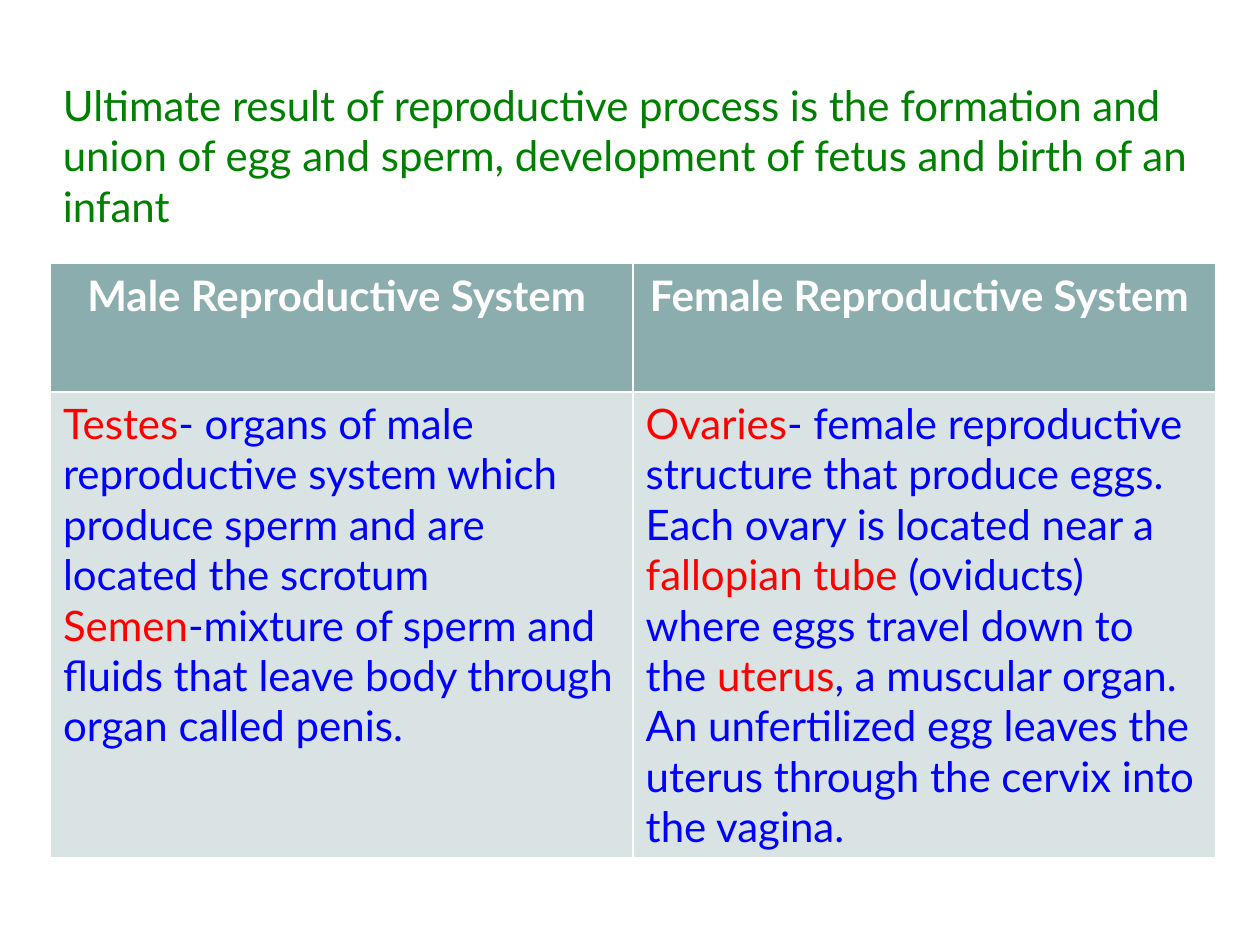
from pptx import Presentation
from pptx.dml.color import RGBColor
from pptx.enum.text import PP_ALIGN
from pptx.util import Inches, Pt

GREEN = RGBColor(0x00, 0x80, 0x00)
WHITE = RGBColor(0xFF, 0xFF, 0xFF)
RED = RGBColor(0xFF, 0x00, 0x00)
BLUE = RGBColor(0x00, 0x00, 0xFF)
HEADER_FILL = RGBColor(0x8C, 0xAD, 0xAE)
BODY_FILL = RGBColor(0xDA, 0xE3, 0xE3)

LEFT, WIDTH = Inches(0.4), Inches(9.25)


def add_text(paragraph, text, color, bold=False):
    run = paragraph.add_run()
    run.text = text
    run.font.name = "Lato"
    run.font.size = Pt(24)
    run.font.bold = bold
    run.font.color.rgb = color


presentation = Presentation()
presentation.slide_width = Inches(10)
presentation.slide_height = Inches(7.5)
slide = presentation.slides.add_slide(presentation.slide_layouts[6])

# Introduction
introduction = slide.shapes.add_textbox(LEFT, Inches(0.58), WIDTH, Inches(1.4))
introduction.text_frame.word_wrap = True
add_text(
    introduction.text_frame.paragraphs[0],
    "Ultimate result of reproductive process is the formation and union of "
    "egg and sperm, development of fetus and birth of an infant",
    GREEN,
)

# Each column: a heading, then paragraphs of (text, color) pieces
columns = [
    ("Male Reproductive System ", [
        [("Testes", RED),
         ("- organs of male reproductive system which produce sperm and are "
          "located the scrotum", BLUE)],
        [("Semen", RED),
         ("-mixture of sperm and fluids that leave body through organ called "
          "penis.", BLUE)],
    ]),
    ("Female Reproductive System ", [
        [("Ovaries", RED),
         ("- female reproductive structure that produce eggs. Each ovary is "
          "located near a ", BLUE),
         ("fallopian tube ", RED),
         ("(oviducts) where eggs travel down to the ", BLUE),
         ("uterus", RED),
         (", a muscular organ. An unfertilized egg leaves the uterus through "
          "the cervix into the vagina.", BLUE)],
    ]),
]

# Comparison table; its default style supplies the white borders
table = slide.shapes.add_table(
    2, len(columns), LEFT, Inches(2.09), WIDTH, Inches(4.7)
).table
table.rows[0].height = Inches(1.02)
table.rows[1].height = Inches(3.68)

for column, (heading, paragraphs) in enumerate(columns):
    header_cell = table.cell(0, column)
    header_cell.fill.solid()
    header_cell.fill.fore_color.rgb = HEADER_FILL
    header_paragraph = header_cell.text_frame.paragraphs[0]
    header_paragraph.alignment = PP_ALIGN.CENTER
    add_text(header_paragraph, heading, WHITE, bold=True)

    body_cell = table.cell(1, column)
    body_cell.fill.solid()
    body_cell.fill.fore_color.rgb = BODY_FILL
    text_frame = body_cell.text_frame
    for index, pieces in enumerate(paragraphs):
        paragraph = text_frame.add_paragraph() if index else text_frame.paragraphs[0]
        for text, color in pieces:
            add_text(paragraph, text, color)

presentation.save("out.pptx")
